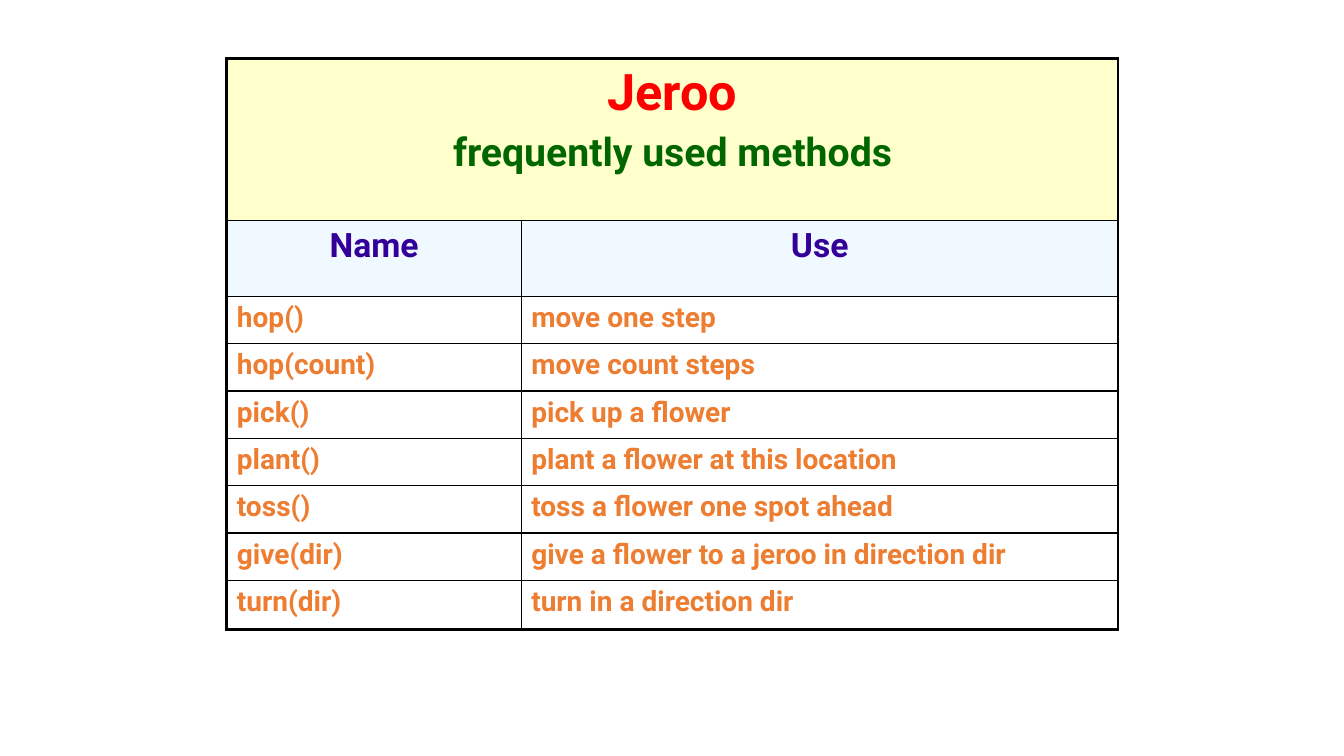
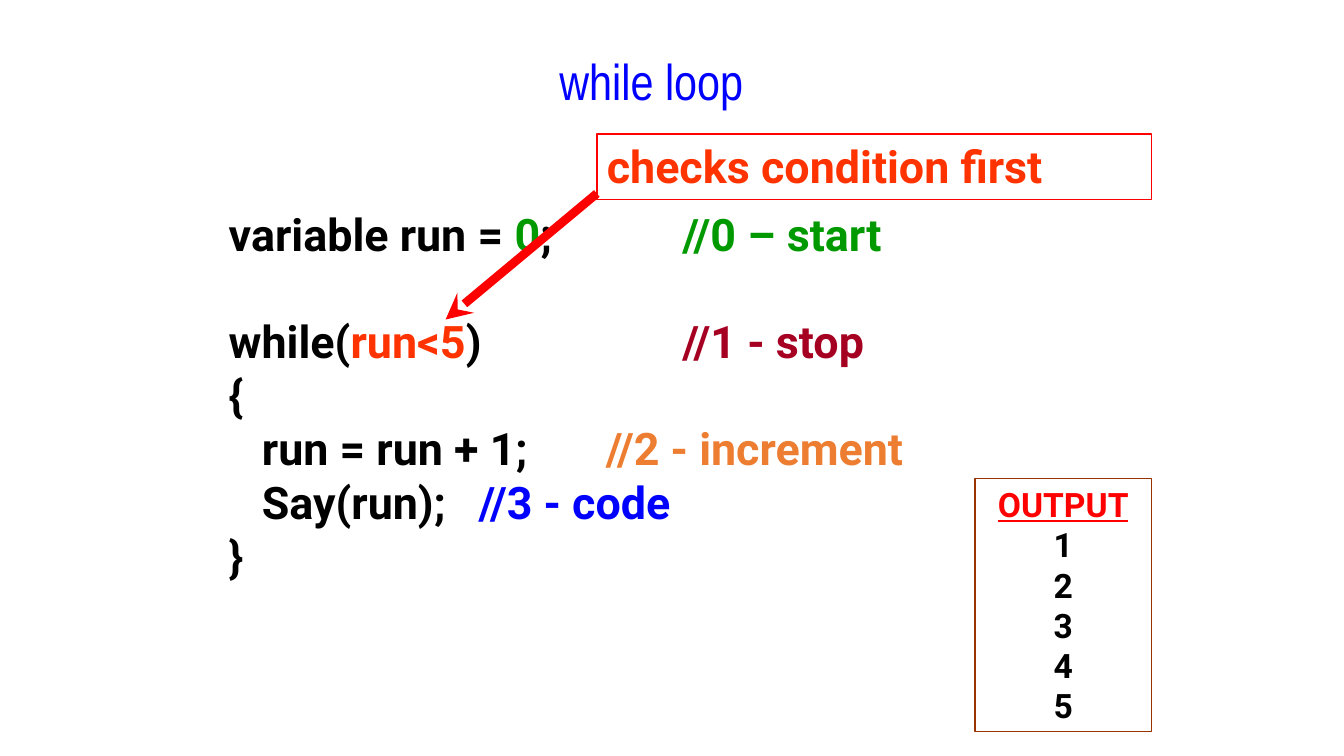
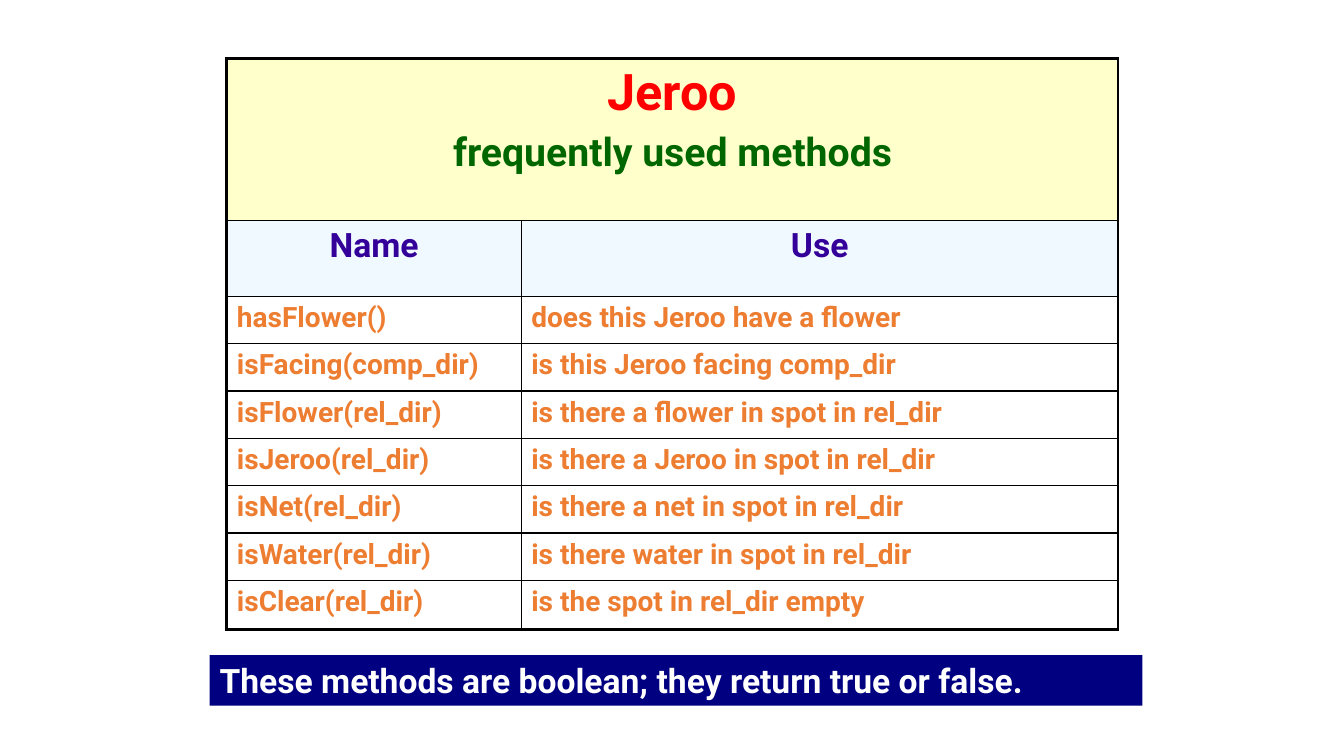
"""Build three slides on Jeroo methods and the while loop."""
import pptx
import pptx.util
import pptx.dml.color
import pptx.enum.shapes
import pptx.enum.text
import pptx.oxml.ns
import lxml.etree

Inches = pptx.util.Inches
Pt = pptx.util.Pt
ALIGN = pptx.enum.text.PP_ALIGN
ANCHOR = pptx.enum.text.MSO_ANCHOR
SHAPE = pptx.enum.shapes.MSO_SHAPE
LINE = pptx.enum.shapes.MSO_CONNECTOR


class Theme:
    font, narrow = "Roboto", "Arial Narrow"
    huge, big, mid, head, body = 36, 32, 28, 24, 20
    black, white, red, blue = "000000", "FFFFFF", "FF0000", "0000FF"
    green, lime, purple, orange = "006600", "009900", "330099", "ED7D31"
    flame, wine, brown, navy = "FF3300", "A50021", "993300", "000080"
    cream, sky = "FFFFCC", "F0F9FF"
    thin, thick, arrow = 1, 2.25, 6.25


TITLE = [("Jeroo", Theme.huge, Theme.red),
         ("frequently used methods", Theme.mid, Theme.green)]
HEADS = ("Name", "Use")
COLS = (2.92, 5.92)
ROWS = (1.61, 0.75) + (0.47,) * 6 + (0.49,)

ACTIONS = [
    ("hop()", "move one step"),
    ("hop(count)", "move count steps"),
    ("pick()", "pick up a flower"),
    ("plant()", "plant a flower at this location"),
    ("toss()", "toss a flower one spot ahead"),
    ("give(dir)", "give a flower to a jeroo in direction dir"),
    ("turn(dir)", "turn in a direction dir"),
]
TESTS = [
    ("hasFlower()", "does this Jeroo have a flower"),
    ("isFacing(comp_dir)", "is this Jeroo facing comp_dir"),
    ("isFlower(rel_dir)", "is there a flower in spot in rel_dir"),
    ("isJeroo(rel_dir)", "is there a Jeroo in spot in rel_dir"),
    ("isNet(rel_dir)", "is there a net in spot in rel_dir"),
    ("isWater(rel_dir)", "is there water in spot in rel_dir"),
    ("isClear(rel_dir)", "is the spot in rel_dir empty"),
]
NOTE = "These methods are boolean; they return true or false."

CODE = [
    ((4.5,), 38, [("variable run = ", Theme.black), ("0", Theme.lime),
                  (";\t", Theme.black), ("//0 – start", Theme.lime)]),
    ((4.5,), 0, [("while(", Theme.black), ("run<5", Theme.flame),
                 (")\t", Theme.black), ("//1 - stop", Theme.wine)]),
    ((), 0, [("{", Theme.black)]),
    ((0.33, 3.74), 0, [("\trun = run + 1;\t", Theme.black),
                       ("//2 - increment", Theme.orange)]),
    ((0.33, 2.48), 0, [("\tSay(run);\t", Theme.black),
                       ("//3 - code", Theme.blue)]),
    ((), 0, [("}", Theme.black)]),
]
OUTPUT = ("1", "2", "3", "4", "5")


def rgb(tint):
    return pptx.dml.color.RGBColor.from_string(tint)


def add_xml(host, tag, **attrs):
    return lxml.etree.SubElement(host, pptx.oxml.ns.qn(tag), attrs)


def style(para, size, tint=None, face=Theme.font, bold=True):
    font = para.font
    font.name, font.size, font.bold = face, Pt(size), bold
    if tint:
        font.color.rgb = rgb(tint)


def write(frame, lines, align=ALIGN.LEFT, gap=0.0):
    for i, (text, size, tint) in enumerate(lines):
        para = frame.paragraphs[0] if i == 0 else frame.add_paragraph()
        para.text = text
        para.alignment = align
        para.space_before = Pt(round(size * gap, 1))
        style(para, size, tint)


def add_box(slide, spot, lines, fill=None, edge=None, align=ALIGN.LEFT):
    box = slide.shapes.add_shape(SHAPE.RECTANGLE, *map(Inches, spot))
    box.shadow.inherit = False
    if fill:
        box.fill.solid()
        box.fill.fore_color.rgb = rgb(fill)
    else:
        box.fill.background()
    if edge:
        box.line.color.rgb = rgb(edge)
        box.line.width = Pt(Theme.thin)
    else:
        box.line.fill.background()
    box.text_frame.vertical_anchor = ANCHOR.TOP
    write(box.text_frame, lines, align)
    return box


def add_edges(cell, row, col):
    outer = {"a:lnL": col == 0, "a:lnR": col == len(COLS) - 1 or row == 0,
             "a:lnT": row == 0, "a:lnB": row == len(ROWS) - 1}
    props = cell._tc.get_or_add_tcPr()
    for tag, rim in outer.items():
        width = Pt(Theme.thick if rim else Theme.thin)
        line = add_xml(props, tag, w=str(width))
        add_xml(add_xml(line, "a:solidFill"), "a:srgbClr", val=Theme.black)


def add_methods(slide, methods):
    frame = slide.shapes.add_table(
        len(ROWS), len(COLS), Inches(2.25), Inches(0.58),
        Inches(sum(COLS)), Inches(sum(ROWS)))
    table = frame.table
    table.first_row = table.horz_banding = False
    for col, width in zip(table.columns, COLS):
        col.width = Inches(width)
    for row, height in zip(table.rows, ROWS):
        row.height = Inches(height)
    table.cell(0, 0).merge(table.cell(0, 1))
    names = [[(text, Theme.head, Theme.purple)] for text in HEADS]
    items = [[[(text, Theme.body, Theme.orange)] for text in pair]
             for pair in methods]
    for r, row in enumerate([[TITLE, []], names] + items):
        for c, lines in enumerate(row):
            cell = table.cell(r, c)
            add_edges(cell, r, c)
            if r < 2:
                cell.fill.solid()
                cell.fill.fore_color.rgb = rgb((Theme.cream, Theme.sky)[r])
            else:
                cell.fill.background()
            align = ALIGN.CENTER if r < 2 else ALIGN.LEFT
            write(cell.text_frame, lines, align, 0.2)


def add_code(slide):
    box = slide.shapes.add_textbox(*map(Inches, (2.17, 2, 8.83, 3.87)))
    frame = box.text_frame
    frame.word_wrap = True
    for i, (stops, after, runs) in enumerate(CODE):
        para = frame.paragraphs[0] if i == 0 else frame.add_paragraph()
        para.space_after = Pt(after)
        if stops:
            tabs = add_xml(para._p.get_or_add_pPr(), "a:tabLst")
            for stop in stops:
                add_xml(tabs, "a:tab", pos=str(Inches(stop)), algn="l")
        style(para, Theme.big)
        for text, tint in runs:
            run = para.add_run()
            run.text = text
            run.font.color.rgb = rgb(tint)


def add_title(slide, text):
    box = slide.shapes.add_textbox(*map(Inches, (3.5, 0.42, 5.92, 0.75)))
    frame = box.text_frame
    frame.word_wrap = True
    frame.vertical_anchor = ANCHOR.MIDDLE
    para = frame.paragraphs[0]
    para.text = text
    para.alignment = ALIGN.CENTER
    style(para, Theme.huge, Theme.blue, Theme.narrow, False)


def add_arrow(slide, start, end):
    arrow = slide.shapes.add_connector(
        LINE.STRAIGHT, *map(Inches, start + end))
    arrow.line.color.rgb = rgb(Theme.red)
    arrow.line.width = Pt(Theme.arrow)
    add_xml(arrow.line._get_or_add_ln(), "a:tailEnd", type="stealth")
    add_xml(arrow._element.spPr, "a:effectLst")


def add_loop(slide):
    add_code(slide)
    add_title(slide, "while loop")
    add_arrow(slide, (5.92, 1.92), (4.42, 3.17))
    add_box(slide, (5.92, 1.33, 5.5, 0.65),
            [("checks condition first", Theme.big, Theme.flame)],
            edge=Theme.red)
    lines = [("OUTPUT", Theme.head, Theme.red)]
    lines += [(text, Theme.head, Theme.black) for text in OUTPUT]
    box = add_box(slide, (9.67, 4.75, 1.75, 2.51), lines,
                  edge=Theme.brown, align=ALIGN.CENTER)
    box.text_frame.paragraphs[0].font.underline = True


def main():
    deck = pptx.Presentation()
    deck.slide_width, deck.slide_height = Inches(13.33), Inches(7.5)
    first, loop, last = [deck.slides.add_slide(deck.slide_layouts[6])
                         for _ in range(3)]
    add_methods(first, ACTIONS)
    add_loop(loop)
    add_methods(last, TESTS)
    add_box(last, (2.08, 6.5, 9.25, 0.5),
            [(NOTE, Theme.head, Theme.white)], fill=Theme.navy)
    deck.save("out.pptx")


if __name__ == "__main__":
    main()
